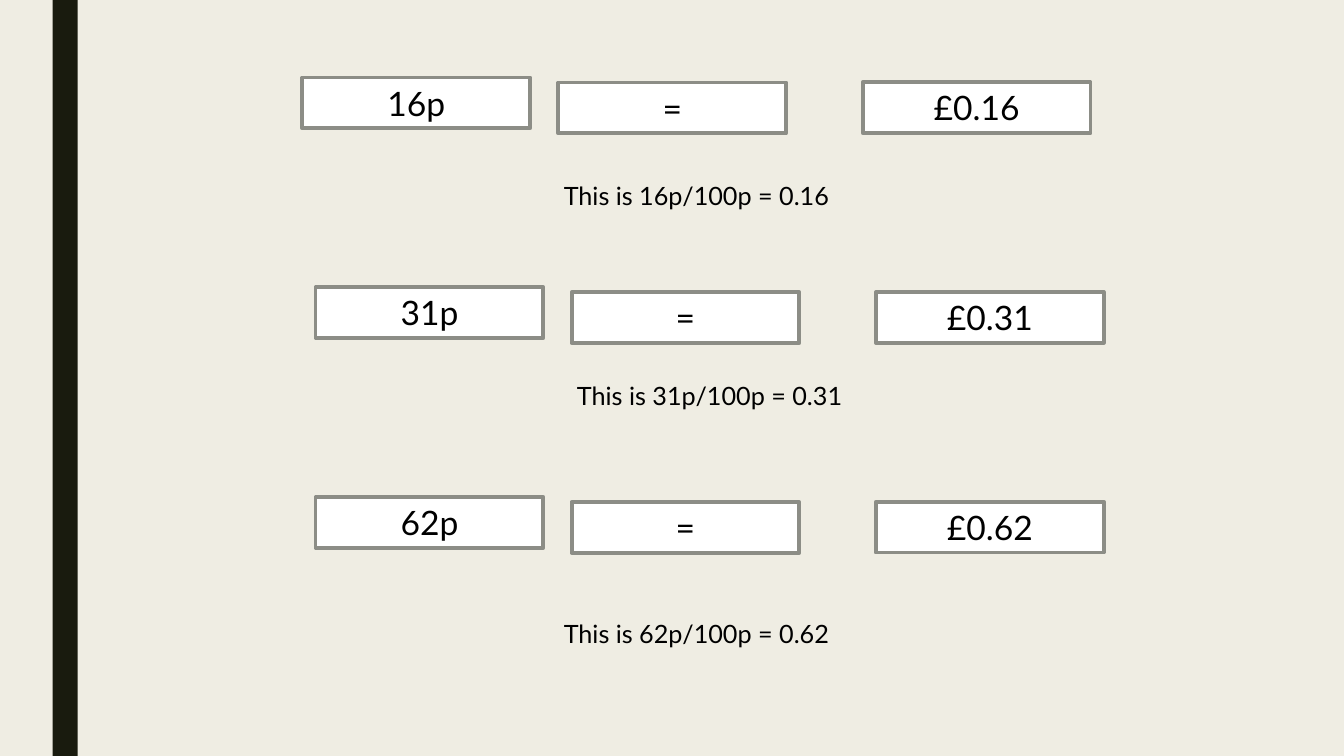
from pptx import Presentation
from pptx.dml.color import RGBColor
from pptx.enum.shapes import MSO_SHAPE
from pptx.enum.text import MSO_ANCHOR, MSO_AUTO_SIZE, PP_ALIGN
from pptx.util import Pt

COLOURS = {
    "background": "EFEDE3",
    "bar": "191B0E",
    "box": "FFFFFF",
    "border": "8C8D86",
    "text": "000000",
}
FRAME_FORMAT = {
    "word_wrap": True,
    "auto_size": MSO_AUTO_SIZE.SHAPE_TO_FIT_TEXT,
    "vertical_anchor": MSO_ANCHOR.TOP,
}
BOX_WIDTH, BOX_HEIGHT = 162.7, 36.35
CAPTION_WIDTH, CAPTION_HEIGHT = 563, 29.1
FIRST_TOP, ROW_PITCH = 55.4, 149.8
BOX_OFFSETS = [(0, 0), (182.9, 3.6), (400.3, 3.4)]
# pence, left edge of the row, top of the caption
ROWS = [(16, 216, 125.3), (31, 225.4, 267.8), (62, 216 + 9.4, 437.8)]
CAPTION_LEFTS = [216, 225.4, 216]


def add_rectangle(left, top, width, height, fill):
    shape = slide.shapes.add_shape(
        MSO_SHAPE.RECTANGLE, Pt(left), Pt(top), Pt(width), Pt(height))
    shape.shadow.inherit = False
    shape.fill.solid()
    shape.fill.fore_color.rgb = RGBColor.from_string(COLOURS[fill])
    shape.line.fill.background()
    return shape


def write_centred(shape, text, size):
    frame = shape.text_frame
    for name, value in FRAME_FORMAT.items():
        setattr(frame, name, value)
    paragraph = frame.paragraphs[0]
    paragraph.alignment = PP_ALIGN.CENTER
    run = paragraph.add_run()
    run.text = text
    for name, value in {"name": "Lato", "size": Pt(size)}.items():
        setattr(run.font, name, value)
    run.font.color.rgb = RGBColor.from_string(COLOURS["text"])


presentation = Presentation()
presentation.slide_width = Pt(960)
presentation.slide_height = Pt(540)
slide = presentation.slides.add_slide(presentation.slide_layouts[6])
slide.background.fill.solid()
slide.background.fill.fore_color.rgb = RGBColor.from_string(COLOURS["background"])

add_rectangle(37.5, 0, 18, 540, "bar")

for index, (pence, row_left, caption_top) in enumerate(ROWS):
    row_top = FIRST_TOP + index * ROW_PITCH
    labels = [f"{pence}p", "=", f"£0.{pence}"]
    for label, (across, down) in zip(labels, BOX_OFFSETS):
        box = add_rectangle(
            row_left + across, row_top + down, BOX_WIDTH, BOX_HEIGHT, "box")
        box.line.color.rgb = RGBColor.from_string(COLOURS["border"])
        box.line.width = Pt(2.75)
        write_centred(box, label, 24)

    caption = slide.shapes.add_textbox(
        Pt(CAPTION_LEFTS[index]), Pt(caption_top),
        Pt(CAPTION_WIDTH), Pt(CAPTION_HEIGHT))
    write_centred(caption, f"This is {pence}p/100p = 0.{pence}", 18)

presentation.save("out.pptx")
